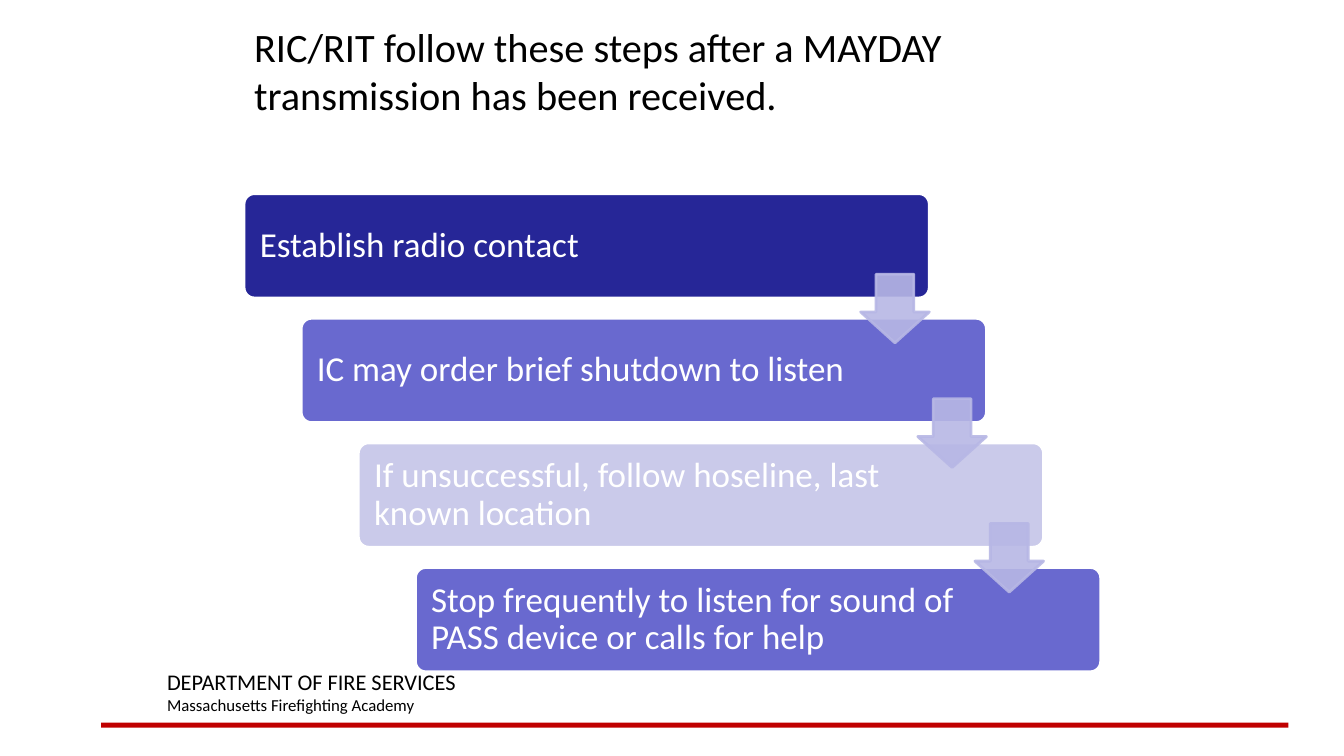
from lxml import etree
from pptx import Presentation
from pptx.dml.color import RGBColor
from pptx.enum import shapes, text
from pptx.oxml.ns import qn
from pptx.util import Cm, Pt

TITLE = "RIC/RIT follow these steps after a MAYDAY transmission has been received."
STEPS = [
    ("Establish radio contact", "navy"),
    ("IC may order brief shutdown to listen", "violet"),
    ("If unsuccessful, follow hoseline, last known location", "pale"),
    ("Stop frequently to listen for sound of PASS device or calls for help", "violet"),
]
FOOTER = [("DEPARTMENT OF FIRE SERVICES", 16), ("Massachusetts Firefighting Academy", 12)]

COLORS = {
    "navy": "262697", "violet": "6969CF", "pale": "CACAEA", "arrow": "B7B7E5",
    "red": "C00000", "white": "FFFFFF", "black": "000000",
}
STEP_LEFT, STEP_TOP, STEP_W, STEP_H = 6.15, 4.88, 17.27, 2.63
SHIFT_X, SHIFT_Y = 1.44, 3.14
ARROW_SIZE, ARROW_DROP = 1.73, 2.03
STEP_FRAME = {
    "word_wrap": True,
    "vertical_anchor": text.MSO_ANCHOR.MIDDLE,
    "margin_left": Cm(0.32),
    "margin_right": Cm(3.26),
}


def color(name):
    return RGBColor.from_string(COLORS[name])


def set_attrs(obj, values):
    for name, value in values.items():
        setattr(obj, name, value)


def write(p, words, size, ink):
    p.alignment = text.PP_ALIGN.LEFT
    r = p.add_run()
    r.text = words
    set_attrs(r.font, {"name": "Calibri", "size": Pt(size)})
    r.font.color.rgb = color(ink)


def add_block(kind, box, fill, line=None, adjustments=()):
    sp = slide.shapes.add_shape(kind, *map(Cm, box))
    sp.shadow.inherit = False
    sp.fill.solid()
    sp.fill.fore_color.rgb = color(fill)
    if line:
        sp.line.color.rgb = color(line)
        sp.line.width = Pt(2)
    else:
        sp.line.fill.background()
    for i, value in enumerate(adjustments):
        sp.adjustments[i] = value
    return sp


def make_translucent(sp, percent):
    for clr in sp._element.spPr.iter(qn("a:srgbClr")):
        etree.SubElement(clr, qn("a:alpha"), val=str(percent * 1000))


prs = Presentation()
set_attrs(prs, {"slide_width": Cm(33.87), "slide_height": Cm(19.05)})
slide = prs.slides.add_slide(prs.slide_layouts[5])

add_block(shapes.MSO_SHAPE.RECTANGLE, (2.55, 18.21, 29.92, 0.13), "red")

footer = slide.shapes.add_textbox(Cm(3.96), Cm(16.71), Cm(14.4), Cm(1.45))
tf = footer.text_frame
tf.word_wrap = True
for i, (words, size) in enumerate(FOOTER):
    p = tf.add_paragraph() if i else tf.paragraphs[0]
    write(p, words, size, "black")

for i, (words, fill) in enumerate(STEPS):
    box = (STEP_LEFT + i * SHIFT_X, STEP_TOP + i * SHIFT_Y, STEP_W, STEP_H)
    sp = add_block(shapes.MSO_SHAPE.ROUNDED_RECTANGLE, box, fill, "white", [0.1])
    set_attrs(sp.text_frame, STEP_FRAME)
    p = sp.text_frame.paragraphs[0]
    p.line_spacing = 0.9
    write(p, words, 25, "white")

for i in range(len(STEPS) - 1):
    left = STEP_LEFT + STEP_W - ARROW_SIZE + i * SHIFT_X
    top = STEP_TOP + ARROW_DROP + i * SHIFT_Y
    sp = add_block(shapes.MSO_SHAPE.DOWN_ARROW, (left, top, ARROW_SIZE, ARROW_SIZE),
                   "arrow", "arrow", [0.55, 0.45])
    make_translucent(sp, 90)

title = slide.shapes.title
set_attrs(title, {"left": Cm(6.15), "top": Cm(0.43), "width": Cm(18.62), "height": Cm(2.54)})
set_attrs(title.text_frame, {
    "word_wrap": True,
    "auto_size": text.MSO_AUTO_SIZE.NONE,
    "vertical_anchor": text.MSO_ANCHOR.TOP,
})
write(title.text_frame.paragraphs[0], TITLE, 28.8, "black")

prs.save("out.pptx")
